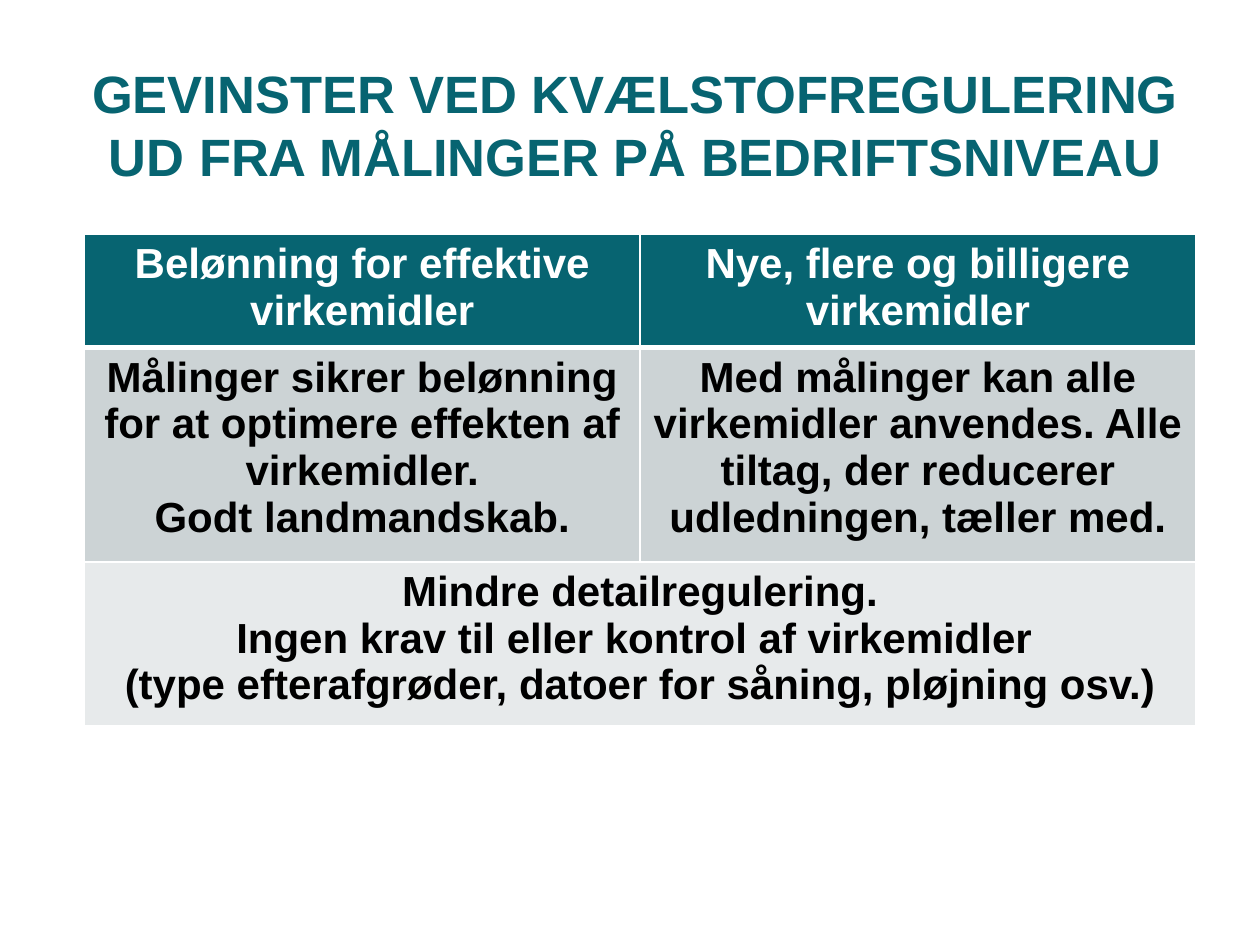
from dataclasses import dataclass

from lxml.etree import SubElement
from pptx import Presentation
from pptx.dml.color import RGBColor
from pptx.enum.text import MSO_ANCHOR, PP_ALIGN
from pptx.oxml.ns import qn
from pptx.slide import Slide
from pptx.table import _Cell
from pptx.text.text import TextFrame
from pptx.util import Inches, Pt


@dataclass(frozen=True)
class Theme:
    font: str = "Arial"
    title_size: int = 30
    table_size: int = 24
    teal: str = "076471"
    white: str = "FFFFFF"
    black: str = "000000"
    band_dark: str = "CCD3D5"
    band_light: str = "E7EAEB"
    thin_border: float = 1
    header_border: float = 3


@dataclass(frozen=True)
class BenefitRow:
    height: float
    fill: str
    color: str
    bottom_border: float
    texts: tuple[str, ...]  # one text spans the whole row


THEME = Theme()
COLUMN_COUNT = 2
COLUMN_WIDTH = 4.41

# "\n" starts a new paragraph, "\v" a new line within one
TITLE = "GEVINSTER VED KVÆLSTOFREGULERING\vUD FRA MÅLINGER PÅ BEDRIFTSNIVEAU"
ROWS = [
    BenefitRow(0.85, THEME.teal, THEME.white, THEME.header_border, (
        "Belønning for effektive virkemidler",
        "Nye, flere og billigere\nvirkemidler",
    )),
    BenefitRow(1.58, THEME.band_dark, THEME.black, THEME.thin_border, (
        "Målinger sikrer belønning for at optimere effekten af virkemidler.\n"
        "Godt landmandskab.",
        "Med målinger kan alle virkemidler anvendes. Alle tiltag, "
        "der reducerer udledningen, tæller med.",
    )),
    BenefitRow(1.21, THEME.band_light, THEME.black, THEME.thin_border, (
        "Mindre detailregulering.\n"
        "Ingen krav til eller kontrol af virkemidler \v"
        "(type efterafgrøder, datoer for såning, pløjning osv.)",
    )),
]


def write_text(frame: TextFrame, text: str, size: int, color: str) -> None:
    frame.text = text
    frame.word_wrap = True
    for paragraph in frame.paragraphs:
        paragraph.alignment = PP_ALIGN.CENTER
        font = paragraph.font
        font.name = THEME.font
        font.size = Pt(size)
        font.bold = True
        font.color.rgb = RGBColor.from_string(color)


def style_cell(cell: _Cell, fill: str, top: float, bottom: float) -> None:
    properties = cell._tc.get_or_add_tcPr()
    widths = {"a:lnL": THEME.thin_border, "a:lnR": THEME.thin_border,
              "a:lnT": top, "a:lnB": bottom}
    for tag, width in widths.items():
        line = SubElement(properties, qn(tag), w=str(Pt(width)))
        SubElement(SubElement(line, qn("a:solidFill")), qn("a:srgbClr"), val=THEME.white)
    cell.fill.solid()
    cell.fill.fore_color.rgb = RGBColor.from_string(fill)


def add_title(slide: Slide) -> None:
    box = slide.shapes.add_textbox(Inches(0.28), Inches(0.36), Inches(9.53), Inches(1.25))
    box.text_frame.vertical_anchor = MSO_ANCHOR.MIDDLE
    write_text(box.text_frame, TITLE, THEME.title_size, THEME.teal)


def add_benefit_table(slide: Slide, rows: list[BenefitRow]) -> None:
    table = slide.shapes.add_table(
        len(rows), COLUMN_COUNT, Inches(0.67), Inches(1.86),
        Inches(COLUMN_COUNT * COLUMN_WIDTH), Inches(sum(row.height for row in rows)),
    ).table
    for column in table.columns:
        column.width = Inches(COLUMN_WIDTH)

    top_border = THEME.thin_border
    for row_index, row in enumerate(rows):
        table.rows[row_index].height = Inches(row.height)
        for column_index in range(COLUMN_COUNT):
            style_cell(table.cell(row_index, column_index), row.fill,
                       top_border, row.bottom_border)
        if len(row.texts) == 1:
            table.cell(row_index, 0).merge(table.cell(row_index, COLUMN_COUNT - 1))
        for column_index, text in enumerate(row.texts):
            write_text(table.cell(row_index, column_index).text_frame, text,
                       THEME.table_size, row.color)
        top_border = row.bottom_border


def main() -> None:
    presentation = Presentation()
    presentation.slide_width = Inches(10)
    presentation.slide_height = Inches(7.5)
    slide = presentation.slides.add_slide(presentation.slide_layouts[6])
    add_title(slide)
    add_benefit_table(slide, ROWS)
    presentation.save("out.pptx")


if __name__ == "__main__":
    main()
